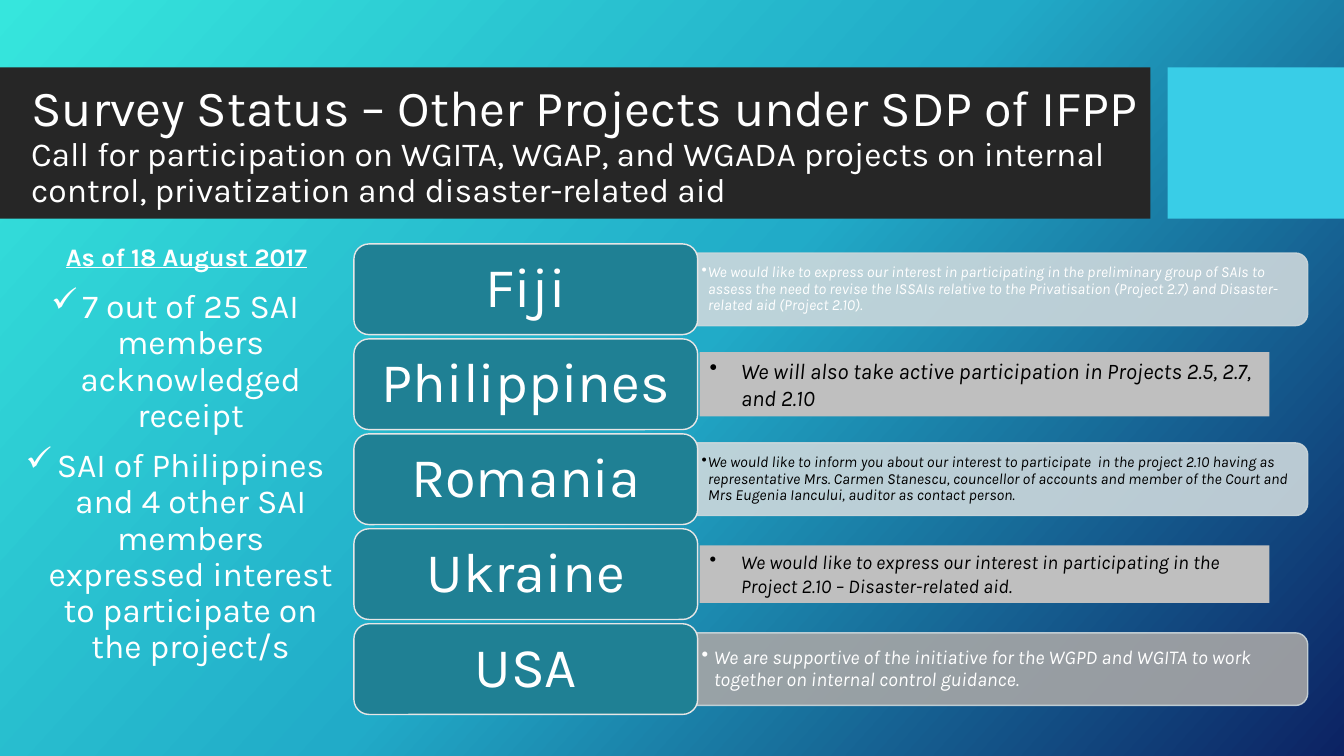
from dataclasses import dataclass

from lxml import etree
from pptx import Presentation
from pptx.dml.color import RGBColor
from pptx.enum.shapes import MSO_SHAPE
from pptx.enum.text import MSO_ANCHOR, MSO_AUTO_SIZE, PP_ALIGN
from pptx.oxml import parse_xml
from pptx.oxml.ns import nsdecls, qn
from pptx.util import Inches, Pt

RECT = MSO_SHAPE.RECTANGLE
ROUND = MSO_SHAPE.ROUNDED_RECTANGLE
HALF = MSO_SHAPE.ROUND_2_SAME_RECTANGLE
TOP, MID = MSO_ANCHOR.TOP, MSO_ANCHOR.MIDDLE
LEFT, MIDDLE = PP_ALIGN.LEFT, PP_ALIGN.CENTER
GROW = MSO_AUTO_SIZE.SHAPE_TO_FIT_TEXT


@dataclass(frozen=True)
class Theme:
    face: str = "Karla"
    white: str = "FFFFFF"
    black: str = "000000"
    band: str = "262626"
    accent: str = "39CDE7"
    tag: str = "1F8094"
    edge: str = "E7E6E6"
    pale: str = "CDD8DC"
    gray: str = "A6A6A6"
    note: str = "BFBFBF"
    fade: tuple = ((0, "36E6DD"), (50, "21ABC8"), (100, "0C2263"))
    angle: int = 42
    head: int = 36
    sub: int = 24
    label: int = 40
    date: int = 18
    large: int = 16
    mid: int = 14
    small: int = 11


class Board:
    """Draws on one slide; boxes are (left, top, width, height) in percent of the slide."""

    def __init__(self, deck, theme):
        self.deck, self.theme = deck, theme
        self.slide = deck.slides.add_slide(deck.slide_layouts[6])

    def place(self, box):
        wide, high = self.deck.slide_width, self.deck.slide_height
        return [int(part * size / 100) for part, size in zip(box, (wide, high) * 2)]

    def backdrop(self):
        theme = self.theme
        fill = self.slide.background.fill
        fill.gradient()
        fill.gradient_angle = 360 - theme.angle
        stops = self.slide.element.find(".//" + qn("a:gsLst"))
        for stop in list(stops):
            stops.remove(stop)
        for spot, color in theme.fade:
            stops.append(parse_xml(
                f'<a:gs {nsdecls("a")} pos="{spot * 1000}"><a:srgbClr val="{color}"/></a:gs>'))

    def shape(self, kind, box, fill, edge=None, turn=False, alpha=None):
        """Add a filled shape; turn rotates it by 90 degrees to cover the same box."""
        x, y, w, h = self.place(box)
        if turn:
            x, y, w, h = x + (w - h) // 2, y + (h - w) // 2, h, w
        shape = self.slide.shapes.add_shape(kind, x, y, w, h)
        shape.rotation = 90 if turn else 0
        shape.shadow.inherit = False
        shape.fill.solid()
        shape.fill.fore_color.rgb = RGBColor.from_string(fill)
        if edge:
            shape.line.color.rgb = RGBColor.from_string(edge)
            shape.line.width = Pt(1)
        else:
            shape.line.fill.background()
        if alpha:
            for tone in shape.element.spPr.iter(qn("a:srgbClr")):
                etree.SubElement(tone, qn("a:alpha"), val=str(alpha * 1000))
        return shape

    def text(self, box, lines, size, **style):
        shape = self.slide.shapes.add_textbox(*self.place(box))
        return self.letter(shape, lines, size, **style)

    def letter(self, shape, lines, size, color=None, align=LEFT, anchor=MID, inset=(0.1, 0.05),
               mark=None, indent=0, space=0.9, gap=0, grow=False, **face):
        """Fill a shape with paragraphs; face holds bold, italic or underline."""
        frame = shape.text_frame
        frame.word_wrap = True
        frame.vertical_anchor = anchor
        if grow:
            frame.auto_size = GROW
        frame.margin_left = frame.margin_right = Inches(inset[0])
        frame.margin_top = frame.margin_bottom = Inches(inset[1])
        for rank, line in enumerate(lines):
            para = frame.add_paragraph() if rank else frame.paragraphs[0]
            para.add_run().text = line
            if mark:
                props = para._p.get_or_add_pPr()
                props.set("marL", str(Inches(indent)))
                props.set("indent", str(-Inches(indent)))
                etree.SubElement(props, qn("a:buChar"), char=mark)
            para.alignment = align
            para.line_spacing = space
            if rank:
                para.space_before = Pt(gap)
            font = para.font
            font.name, font.size = self.theme.face, Pt(size)
            font.color.rgb = RGBColor.from_string(color or self.theme.white)
            for name, value in face.items():
                setattr(font, name, value)
        return frame

    def title(self, box, head, sub):
        para = self.text(box, [head], self.theme.head).paragraphs[0]
        para.add_line_break()
        run = para.add_run()
        run.text = sub
        run.font.size = Pt(self.theme.sub)

    def tag(self, box, name):
        shape = self.shape(ROUND, box, self.theme.tag, self.theme.edge)
        self.letter(shape, [name], self.theme.label, align=MIDDLE, inset=(0.17, 0.08))

    def bar(self, box, fill, line, size, color, indent):
        self.shape(HALF, box, fill, self.theme.pale, turn=True, alpha=90)
        x, y, w, h = box
        self.text((x, y + 0.45, w - 0.3, h - 0.9), [line], size, color=color,
                  inset=(0.05, 0.02), mark="•", indent=indent, italic=True)

    def note(self, box, line, size):
        shape = self.shape(RECT, box, self.theme.note)
        self.letter(shape, [line], size, color=self.theme.black, anchor=TOP, mark="•",
                    indent=0.31, space=1.0, grow=True, italic=True)


def main():
    deck = Presentation()
    deck.slide_width, deck.slide_height = Inches(13.33), Inches(7.5)
    theme = Theme()
    board = Board(deck, theme)
    board.backdrop()
    board.shape(RECT, (0, 8.93, 85.6, 20), theme.band)
    board.shape(RECT, (86.87, 8.93, 13.13, 20), theme.accent)
    board.title((1.58, 9.47, 87.4, 19.87), "Survey Status – Other Projects under SDP of IFPP",
                "Call for participation on WGITA, WGAP, and WGADA projects on internal control, "
                "privatization and disaster-related aid")
    board.text((2.33, 31.2, 23.1, 5.33), ["As of 18 August 2017"], theme.date, align=MIDDLE,
               anchor=TOP, space=1.0, grow=True, bold=True, underline=True)
    board.text((0.38, 34.27, 25.28, 57.87), [
        "7 out of 25 SAI members acknowledged receipt",
        "SAI of Philippines and 4 other SAI members expressed interest to participate on "
        "the project/s",
    ], theme.sub, align=MIDDLE, mark="✓", indent=0.31, gap=10)

    bars = {
        "Fiji": (theme.pale, "We would like to express our interest in participating in the "
                 "preliminary group of SAIs to assess the need to revise the ISSAIs relative to "
                 "the Privatisation (Project 2.7) and Disaster-related aid (Project 2.10).",
                 theme.small, theme.white, 0.06),
        "Romania": (theme.pale, "We would like to inform you about our interest to participate  "
                    "in the project 2.10 having as representative Mrs. Carmen Stanescu, "
                    "councellor of accounts and member of the Court and Mrs Eugenia Iancului, "
                    "auditor as contact person.", theme.small, theme.black, 0.06),
        "USA": (theme.gray, "We are supportive of the initiative for the WGPD and WGITA to work "
                "together on internal control guidance.", theme.mid, theme.white, 0.12),
    }
    notes = {
        "Philippines": (8.53, "We will also take active participation in Projects 2.5, 2.7, "
                        "and 2.10", theme.large),
        "Ukraine": (7.6, "We would like to express our interest in participating in the "
                    "Project 2.10 – Disaster-related aid.", theme.mid),
    }
    first, pitch, high, thin = 32.27, 12.56, 12, 9.6
    for row, name in enumerate(("Fiji", "Philippines", "Romania", "Ukraine", "USA")):
        top = first + row * pitch
        center = top + high / 2
        if name in bars:
            board.bar((51.84, center - thin / 2, 45.46, thin), *bars[name])
        else:
            tall, line, size = notes[name]
            board.note((52.06, center - tall / 2, 42.39, tall), line, size)
        board.tag((26.33, top, 25.58, high), name)
    deck.save("out.pptx")


if __name__ == "__main__":
    main()
